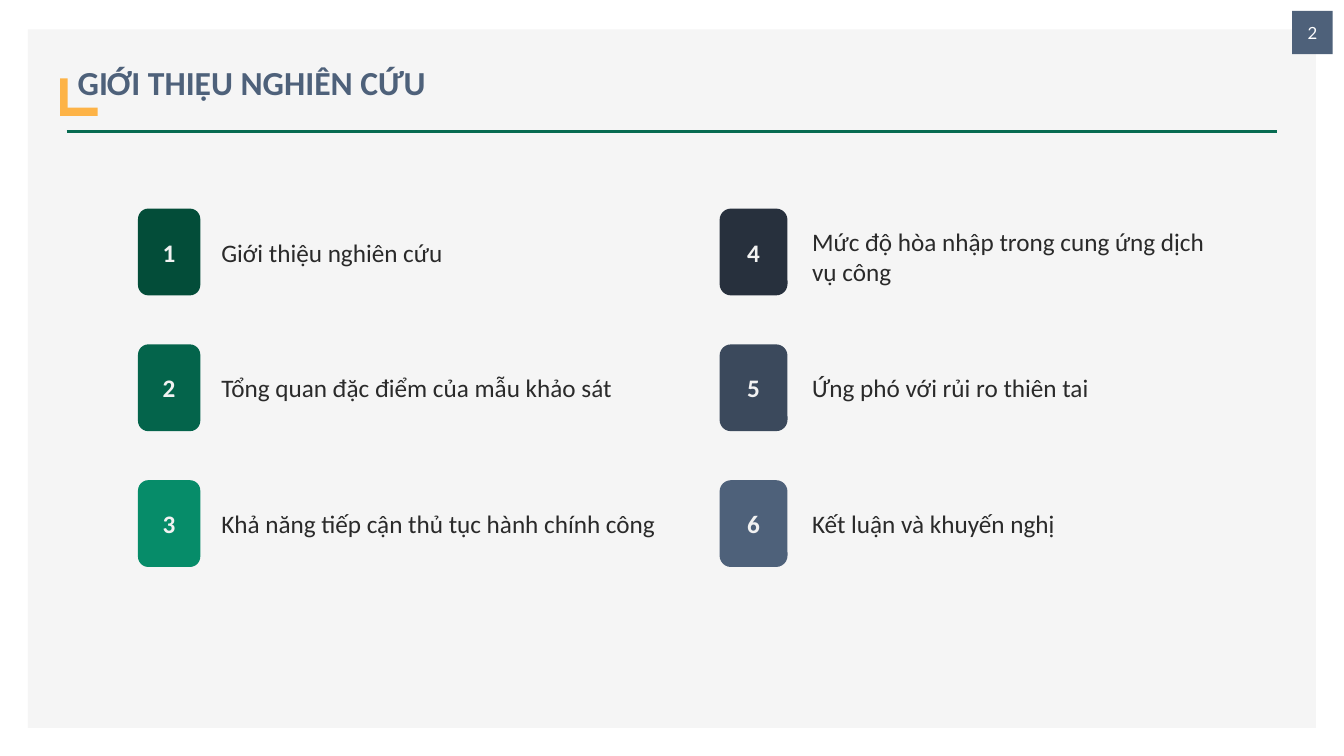
from dataclasses import dataclass

from lxml.etree import SubElement
from pptx import Presentation
from pptx.dml.color import RGBColor
from pptx.enum.shapes import MSO_CONNECTOR, MSO_SHAPE
from pptx.enum.text import MSO_ANCHOR, PP_ALIGN
from pptx.oxml.ns import qn
from pptx.shapes.autoshape import Shape
from pptx.slide import Slide
from pptx.util import Pt

ROW_TOP = 149
ROW_PITCH = 97
BADGE_HEIGHT = 62
PANEL_COLOR = "F5F5F5"
SLATE = "4E617A"


@dataclass(frozen=True)
class Box:
    left: float
    top: float
    width: float
    height: float


@dataclass(frozen=True)
class TextStyle:
    size: float
    color: str
    bold: bool = False
    font: str = "Calibri"
    align: PP_ALIGN = PP_ALIGN.LEFT
    line_spacing: float = 1.0


@dataclass(frozen=True)
class Topic:
    label: str
    color: str
    text_shift: float = 0


@dataclass(frozen=True)
class Column:
    badge_left: float
    badge_width: float
    text_left: float
    text_width: float
    topics: tuple[Topic, ...]


PAGE_STYLE = TextStyle(12, "FFFFFF", font="Lato", align=PP_ALIGN.CENTER)
TITLE_STYLE = TextStyle(24, SLATE, bold=True, line_spacing=1.5)
BADGE_STYLE = TextStyle(18, "F2F2F2", bold=True, align=PP_ALIGN.CENTER)
TOPIC_STYLE = TextStyle(18, "2A2A2A")

COLUMNS = (
    Column(98.6, 44.5, 151, 329, (
        Topic("Giới thiệu nghiên cứu", "034D39"),
        Topic("Tổng quan đặc điểm của mẫu khảo sát", "04644B"),
        Topic("Khả năng tiếp cận thủ tục hành chính công", "068C69"),
    )),
    Column(514, 48.5, 573, 307, (
        Topic("Mức độ hòa nhập trong cung ứng dịch vụ công", "27303D", 3),
        Topic("Ứng phó với rủi ro thiên tai", "3B495C"),
        Topic("Kết luận và khuyến nghị", SLATE),
    )),
)


def rgb(color: str) -> RGBColor:
    return RGBColor.from_string(color)


def write_text(shape: Shape, text: str, style: TextStyle) -> None:
    frame = shape.text_frame
    frame.word_wrap = True
    frame.vertical_anchor = MSO_ANCHOR.MIDDLE
    paragraph = frame.paragraphs[0]
    paragraph.text = text
    paragraph.alignment = style.align
    paragraph.line_spacing = style.line_spacing
    paragraph.font.name = style.font
    paragraph.font.size = Pt(style.size)
    paragraph.font.bold = style.bold
    paragraph.font.color.rgb = rgb(style.color)


def add_block(slide: Slide, box: Box, color: str,
              kind: MSO_SHAPE = MSO_SHAPE.RECTANGLE) -> Shape:
    shape = slide.shapes.add_shape(
        kind, Pt(box.left), Pt(box.top), Pt(box.width), Pt(box.height))
    shape.shadow.inherit = False
    shape.fill.solid()
    shape.fill.fore_color.rgb = rgb(color)
    shape.line.fill.background()
    return shape


def add_rule(slide: Slide, left: float, right: float, top: float) -> None:
    rule = slide.shapes.add_connector(
        MSO_CONNECTOR.STRAIGHT, Pt(left), Pt(top), Pt(right), Pt(top))
    rule.line.color.rgb = rgb("076B51")
    rule.line.width = Pt(2)
    SubElement(rule._element.spPr, qn("a:effectLst"))


def add_column(slide: Slide, column: Column, first_number: int) -> None:
    for row, topic in enumerate(column.topics):
        top = ROW_TOP + row * ROW_PITCH
        badge = add_block(
            slide, Box(column.badge_left, top, column.badge_width, BADGE_HEIGHT),
            topic.color, MSO_SHAPE.ROUNDED_RECTANGLE)
        write_text(badge, str(first_number + row), BADGE_STYLE)
        label = slide.shapes.add_textbox(
            Pt(column.text_left), Pt(top + topic.text_shift),
            Pt(column.text_width), Pt(BADGE_HEIGHT))
        write_text(label, topic.label, TOPIC_STYLE)


def main() -> None:
    presentation = Presentation()
    presentation.slide_width = Pt(960)
    presentation.slide_height = Pt(540)
    slide = presentation.slides.add_slide(presentation.slide_layouts[6])

    add_block(slide, Box(20, 21, 920, 499), PANEL_COLOR)
    add_rule(slide, 47.7, 912, 94)
    page_number = add_block(slide, Box(923, 7.7, 29, 31), SLATE)
    write_text(page_number, "2", PAGE_STYLE)
    add_block(slide, Box(43, 56, 26.8, 26.8), "FDB347")
    title = add_block(slide, Box(48.4, 26, 648, 51), PANEL_COLOR)
    write_text(title, "GIỚI THIỆU NGHIÊN CỨU", TITLE_STYLE)

    first_number = 1
    for column in COLUMNS:
        add_column(slide, column, first_number)
        first_number += len(column.topics)

    presentation.save("out.pptx")


if __name__ == "__main__":
    main()
